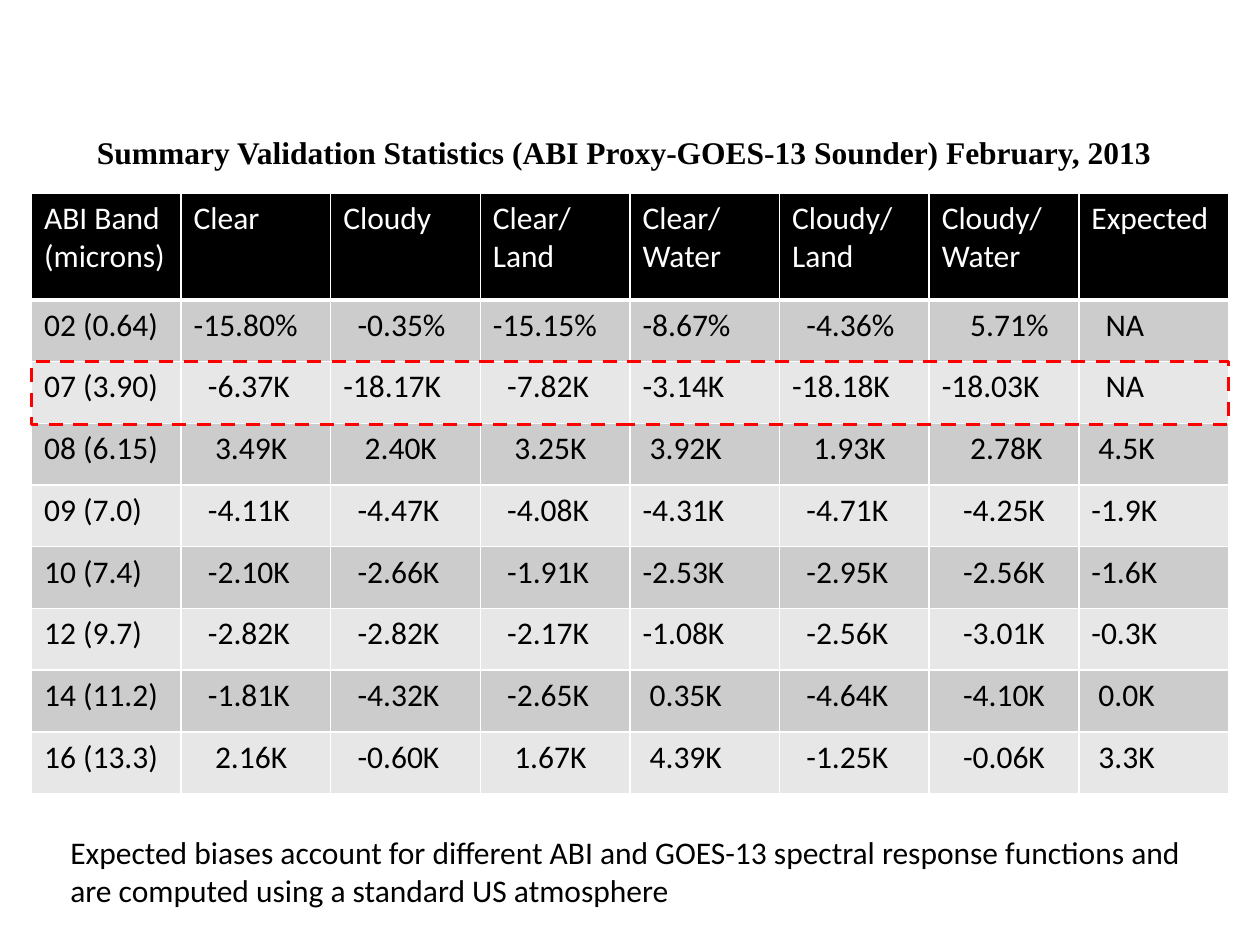
import pptx
import pptx.dml.color
import pptx.enum.dml
import pptx.enum.shapes
import pptx.enum.text
import pptx.oxml
import pptx.oxml.ns
import pptx.util

Inches, Pt = pptx.util.Inches, pptx.util.Pt

HEADERS = ["ABI Band\n(microns)", "Clear", "Cloudy", "Clear/\nLand", "Clear/\nWater",
           "Cloudy/\nLand", "Cloudy/\nWater", "Expected"]
ROWS = [
    ["02 (0.64)", "-15.80%", "-0.35%", "-15.15%", "-8.67%", "-4.36%", "5.71%", "NA"],
    ["07 (3.90)", "-6.37K", "-18.17K", "-7.82K", "-3.14K", "-18.18K", "-18.03K", "NA"],
    ["08 (6.15)", "3.49K", "2.40K", "3.25K", "3.92K", "1.93K", "2.78K", "4.5K"],
    ["09 (7.0)", "-4.11K", "-4.47K", "-4.08K", "-4.31K", "-4.71K", "-4.25K", "-1.9K"],
    ["10 (7.4)", "-2.10K", "-2.66K", "-1.91K", "-2.53K", "-2.95K", "-2.56K", "-1.6K"],
    ["12 (9.7)", "-2.82K", "-2.82K", "-2.17K", "-1.08K", "-2.56K", "-3.01K", "-0.3K"],
    ["14 (11.2)", "-1.81K", "-4.32K", "-2.65K", "0.35K", "-4.64K", "-4.10K", "0.0K"],
    ["16 (13.3)", "2.16K", "-0.60K", "1.67K", "4.39K", "-1.25K", "-0.06K", "3.3K"],
]
# Indent of a one-digit negative value in each column, in steps
COLUMN_INDENT = [0, 2, 2, 2, 0, 2, 3, 0]
STEP = Pt(4.07)

LEFT, TOP, WIDTH = 0.25, 1.53, 9.5
HEADER_H, ROW_H = 0.85, 0.49


def rgb(value):
    return pptx.dml.color.RGBColor.from_string(value)


def set_text(tf, text, color="000000", font="Calibri", bold=False):
    tf.text = text
    for p in tf.paragraphs:
        for r in p.runs:
            r.font.size, r.font.name, r.font.bold = Pt(18), font, bold
            r.font.color.rgb = rgb(color)


prs = pptx.Presentation()
prs.slide_width, prs.slide_height = Inches(10), Inches(7.5)
s = prs.slides.add_slide(prs.slide_layouts[6])

# Statistics table
table = s.shapes.add_table(len(ROWS) + 1, len(HEADERS), Inches(LEFT), Inches(TOP), Inches(WIDTH),
                           Inches(HEADER_H + ROW_H * len(ROWS))).table
for col in table.columns:
    col.width = Inches(WIDTH / len(HEADERS))
for i, values in enumerate([HEADERS] + ROWS):
    table.rows[i].height = Inches(ROW_H if i else HEADER_H)
    for j, value in enumerate(values):
        cell = table.cell(i, j)
        set_text(cell.text_frame, value, "000000" if i else "FFFFFF")
        if i and j:
            if value == "NA":
                indent = 2
            elif len(value.split(".")[0]) == 3:
                indent = 0
            else:
                indent = COLUMN_INDENT[j] + (value[0] != "-")
            cell.margin_left = Inches(0.1) + indent * STEP
        tcPr = cell._tc.get_or_add_tcPr()
        for side in "LRTB":
            width = Pt(3 if i == 0 and side == "B" else 1)
            tcPr.append(pptx.oxml.parse_xml(
                f'<a:ln{side} {pptx.oxml.ns.nsdecls("a")} w="{width}"><a:solidFill>'
                f'<a:srgbClr val="FFFFFF"/></a:solidFill></a:ln{side}>'))
        cell.fill.solid()
        cell.fill.fore_color.rgb = rgb("000000" if i == 0 else "CCCCCC" if i % 2 else "E7E7E7")

# Title above the table
tf = s.shapes.add_textbox(Inches(0.67), Inches(1.01), Inches(8.65), Inches(0.4)).text_frame
tf.word_wrap = False
tf.auto_size = pptx.enum.text.MSO_AUTO_SIZE.SHAPE_TO_FIT_TEXT
set_text(tf, "Summary Validation Statistics (ABI Proxy-GOES-13 Sounder) February, 2013",
         font="Times New Roman", bold=True)

# Dashed frame around the band 07 row
sp = s.shapes.add_shape(pptx.enum.shapes.MSO_SHAPE.RECTANGLE, Inches(LEFT),
                        Inches(TOP + HEADER_H + ROW_H), Inches(WIDTH), Inches(0.5))
sp.shadow.inherit = False
sp.fill.background()
sp.line.color.rgb = rgb("FF0000")
sp.line.width = Pt(2)
sp.line.dash_style = pptx.enum.dml.MSO_LINE.DASH

# Note below the table
tf = s.shapes.add_textbox(Inches(0.46), Inches(6.56), Inches(9.08), Inches(0.71)).text_frame
tf.word_wrap = True
tf.auto_size = pptx.enum.text.MSO_AUTO_SIZE.SHAPE_TO_FIT_TEXT
set_text(tf, "Expected biases account for different ABI and GOES-13 spectral response functions "
             "and are computed using a standard US atmosphere")

prs.save("out.pptx")
